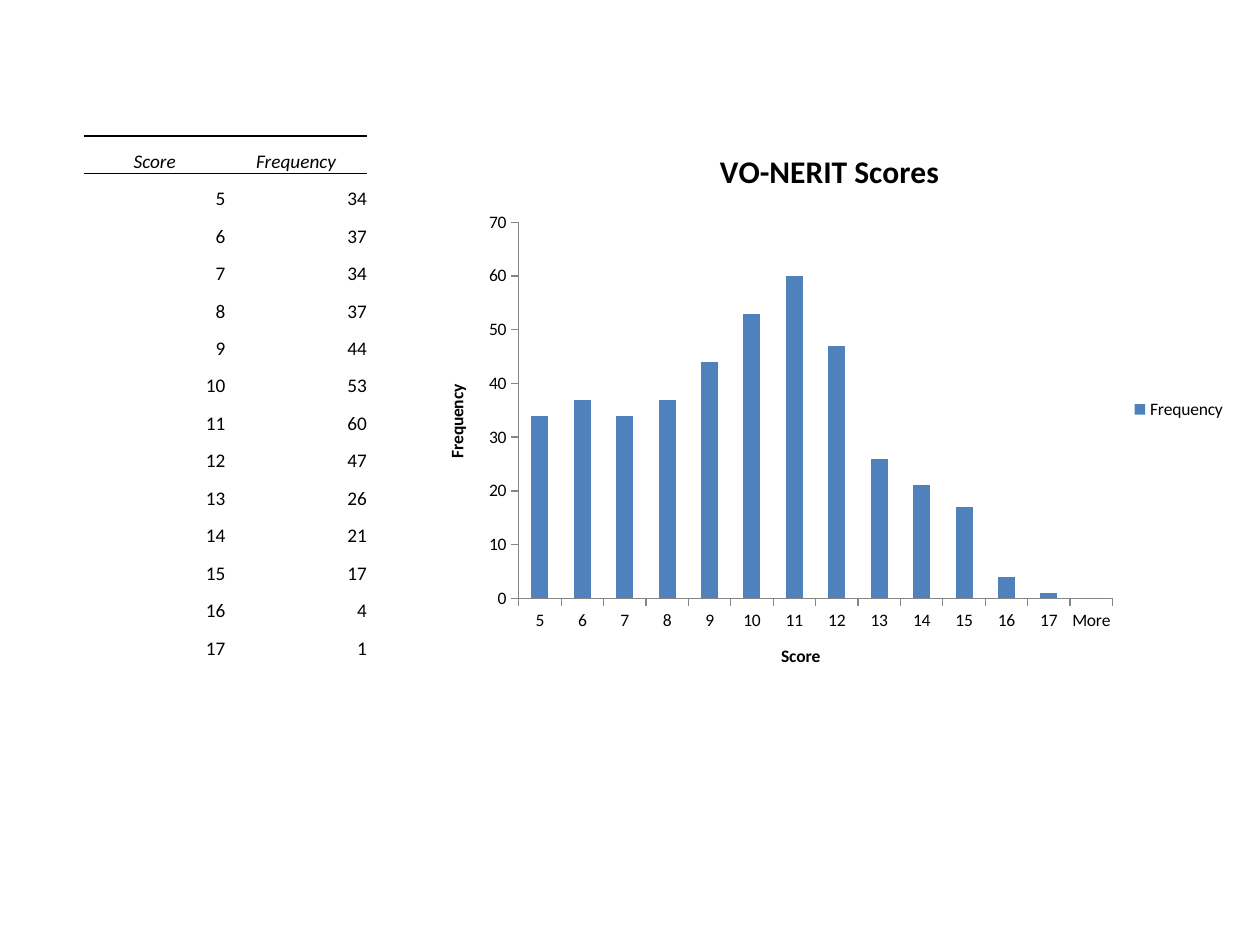
from dataclasses import dataclass

from lxml import etree
from pptx import Presentation
from pptx import util as u
from pptx.chart.data import CategoryChartData
from pptx.dml.color import RGBColor
from pptx.enum import chart as ch
from pptx.enum import text
from pptx.oxml import ns


@dataclass(frozen=True)
class Theme:
    font: str = "Calibri"
    ink: str = "000000"
    bar: str = "4F81BD"
    axis: str = "868686"
    table_size: int = 11
    chart_size: int = 10
    title_size: int = 18


THEME = Theme()
PX_PER_INCH = 126
NO_STYLE = "{2D5ABB26-0587-4C30-8999-92F81FD0307C}"
HEADERS = ("Score", "Frequency")
FREQUENCIES = (34, 37, 34, 37, 44, 53, 60, 47, 26, 21, 17, 4, 1)
SCORES = range(5, 5 + len(FREQUENCIES))


def px(count):
    return u.Emu(round(count * u.Inches(1) / PX_PER_INCH))


def apply(target, formats):
    for name, value in formats.items():
        setattr(target, name, value)


def style_font(font, size, **formats):
    apply(font, {"name": THEME.font, "size": u.Pt(size), **formats})
    font.color.rgb = RGBColor.from_string(THEME.ink)


def rule_cell(cell, rules):
    properties = cell._tc.get_or_add_tcPr()
    for position, (side, points) in enumerate(rules.items()):
        line = etree.Element(ns.qn(f"a:{side}"), w=str(u.Pt(points)))
        if points:
            fill = etree.SubElement(line, ns.qn("a:solidFill"))
            etree.SubElement(fill, ns.qn("a:srgbClr"), val=THEME.ink)
        else:
            etree.SubElement(line, ns.qn("a:noFill"))
        properties.insert(position, line)


def fill_cell(cell, value, align, italic, rules):
    margins = ("margin_left", "margin_right", "margin_top", "margin_bottom")
    apply(cell, dict.fromkeys(margins, 0))
    apply(cell, {"text": str(value), "vertical_anchor": text.MSO_ANCHOR.BOTTOM})
    cell.fill.background()
    paragraph = cell.text_frame.paragraphs[0]
    paragraph.alignment = align
    style_font(paragraph.runs[0].font, THEME.table_size, italic=italic)
    rule_cell(cell, rules)


def add_score_table(slide, left, top, width, height):
    rows = [HEADERS, *zip(SCORES, FREQUENCIES)]
    frame = slide.shapes.add_table(
        len(rows), len(HEADERS), px(left), px(top), px(width), px(height))
    table = frame.table
    apply(table, {"first_row": False, "horz_banding": False})
    table._tbl.tblPr.find(ns.qn("a:tableStyleId")).text = NO_STYLE
    plain = {"lnT": 0, "lnB": 0}
    rules = {0: {"lnT": 1, "lnB": 0.5}, 1: {"lnT": 0.5, "lnB": 0}}
    for index, row in enumerate(rows):
        header = index == 0
        align = text.PP_ALIGN.CENTER if header else text.PP_ALIGN.RIGHT
        for column, value in enumerate(row):
            fill_cell(table.cell(index, column), value, align, header,
                      rules.get(index, plain))


def set_title(owner, caption, size):
    frame = (owner.chart_title if hasattr(owner, "chart_title")
             else owner.axis_title).text_frame
    frame.text = caption
    style_font(frame.paragraphs[0].runs[0].font, size, bold=True)


def style_axis(axis, caption):
    apply(axis, {"has_major_gridlines": False,
                 "major_tick_mark": ch.XL_TICK_MARK.OUTSIDE,
                 "minor_tick_mark": ch.XL_TICK_MARK.NONE})
    axis.format.line.width = u.Pt(0.75)
    axis.format.line.color.rgb = RGBColor.from_string(THEME.axis)
    set_title(axis, caption, THEME.chart_size)


def add_score_chart(slide, left, top, width, height):
    data = CategoryChartData()
    data.categories = [*map(str, SCORES), "More"]
    data.add_series("Frequency", [*FREQUENCIES, 0])
    chart = slide.shapes.add_chart(
        ch.XL_CHART_TYPE.COLUMN_CLUSTERED,
        px(left), px(top), px(width), px(height), data).chart
    style_font(chart.font, THEME.chart_size)
    set_title(chart, "VO-NERIT Scores", THEME.title_size)
    style_axis(chart.category_axis, "Score")
    style_axis(chart.value_axis, "Frequency")
    chart.has_legend = True
    apply(chart.legend, {"position": ch.XL_LEGEND_POSITION.RIGHT,
                         "include_in_layout": False})
    plot = chart.plots[0]
    apply(plot, {"gap_width": 150, "vary_by_categories": False})
    bars = plot.series[0].format.fill
    bars.solid()
    bars.fore_color.rgb = RGBColor.from_string(THEME.bar)


def main():
    deck = Presentation()
    apply(deck, {"slide_width": px(1260), "slide_height": px(945)})
    slide = deck.slides.add_slide(deck.slide_layouts[6])
    add_score_chart(slide, 420, 126, 819, 567)
    add_score_table(slide, 84, 136, 283, 525)
    deck.save("out.pptx")


if __name__ == "__main__":
    main()
